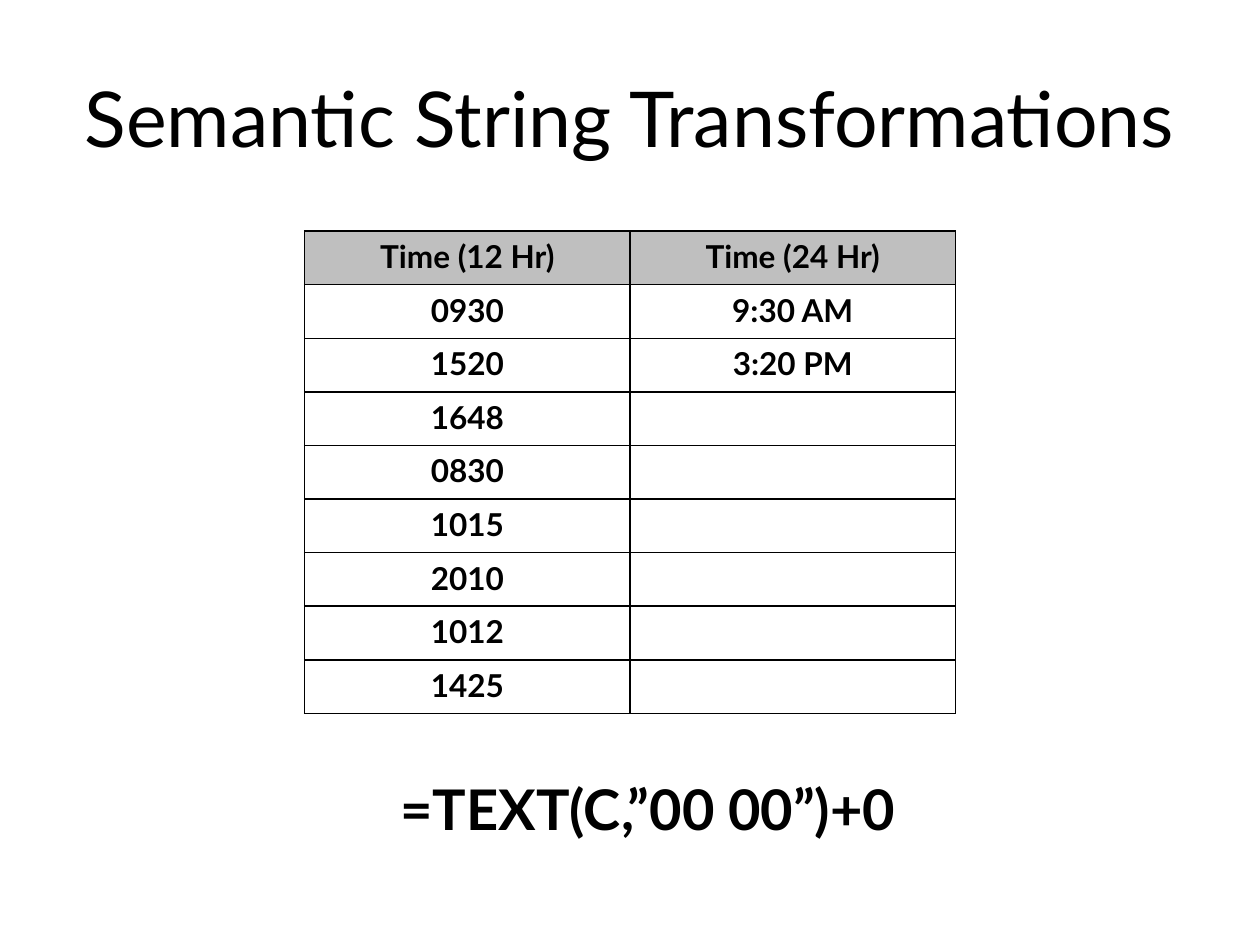
from dataclasses import dataclass

from lxml.etree import SubElement
from pptx import Presentation
from pptx.dml.color import RGBColor
from pptx.enum.text import MSO_ANCHOR as Anchor, PP_ALIGN as Align
from pptx.oxml.ns import qn
from pptx.slide import Slide
from pptx.util import Cm, Pt

COLOURS = {"ink": "000000", "header": "BFBFBF"}
TIMES = [
    ("Time (12 Hr)", "Time (24 Hr)"),
    ("0930", "9:30 AM"),
    ("1520", "3:20 PM"),
    *((time, "") for time in ("1648", "0830", "1015", "2010", "1012", "1425")),
]


@dataclass
class SlideBuilder:
    """Draw text and tables on one slide in a shared style."""

    slide: Slide
    font: str = "Lato"

    def format_text(self, text_frame, size, bold, align):
        for paragraph in text_frame.paragraphs:
            paragraph.alignment = align
            for run in paragraph.runs:
                run.font.name = self.font
                run.font.size = Pt(size)
                run.font.bold = bold
                run.font.color.rgb = RGBColor.from_string(COLOURS["ink"])

    def add_text(self, text, left, top, width, height, size,
                 bold=False, align=Align.LEFT, anchor=Anchor.TOP):
        shape = self.slide.shapes.add_textbox(
            Cm(left), Cm(top), Cm(width), Cm(height))
        text_frame = shape.text_frame
        text_frame.word_wrap = True
        text_frame.vertical_anchor = anchor
        text_frame.text = text
        self.format_text(text_frame, size, bold, align)

    def add_borders(self, cell):
        properties = cell._tc.get_or_add_tcPr()
        for side in ("a:lnL", "a:lnR", "a:lnT", "a:lnB"):
            line = SubElement(properties, qn(side), w=str(Pt(1)))
            fill = SubElement(line, qn("a:solidFill"))
            SubElement(fill, qn("a:srgbClr"), val=COLOURS["ink"])

    def add_table(self, rows, left, top, column_width, row_height, size):
        column_count = len(rows[0])
        table = self.slide.shapes.add_table(
            len(rows), column_count, Cm(left), Cm(top),
            Cm(column_width * column_count), Cm(row_height * len(rows))).table
        table.horz_banding = False
        for column in table.columns:
            column.width = Cm(column_width)
        for row_index, values in enumerate(rows):
            table.rows[row_index].height = Cm(row_height)
            for column_index, value in enumerate(values):
                cell = table.cell(row_index, column_index)
                cell.text_frame.text = value
                self.format_text(cell.text_frame, size, True, Align.CENTER)
                self.add_borders(cell)
                if row_index == 0:
                    cell.fill.solid()
                    cell.fill.fore_color.rgb = RGBColor.from_string(
                        COLOURS["header"])
                else:
                    cell.fill.background()


def main():
    presentation = Presentation()
    presentation.slide_width = Cm(25.4)
    presentation.slide_height = Cm(19.05)
    blank_layout = presentation.slide_layouts[6]
    builder = SlideBuilder(presentation.slides.add_slide(blank_layout))
    builder.add_text("Semantic String Transformations", 1.27, 0.76, 22.86, 3.18,
                     44, align=Align.CENTER, anchor=Anchor.MIDDLE)
    builder.add_table(TIMES, 6.14, 4.66, 6.56, 1.08, 18)
    builder.add_text("=TEXT(C,”00 00”)+0", 7.82, 15.49, 11, 1.63, 32, bold=True)
    presentation.save("out.pptx")


if __name__ == "__main__":
    main()
